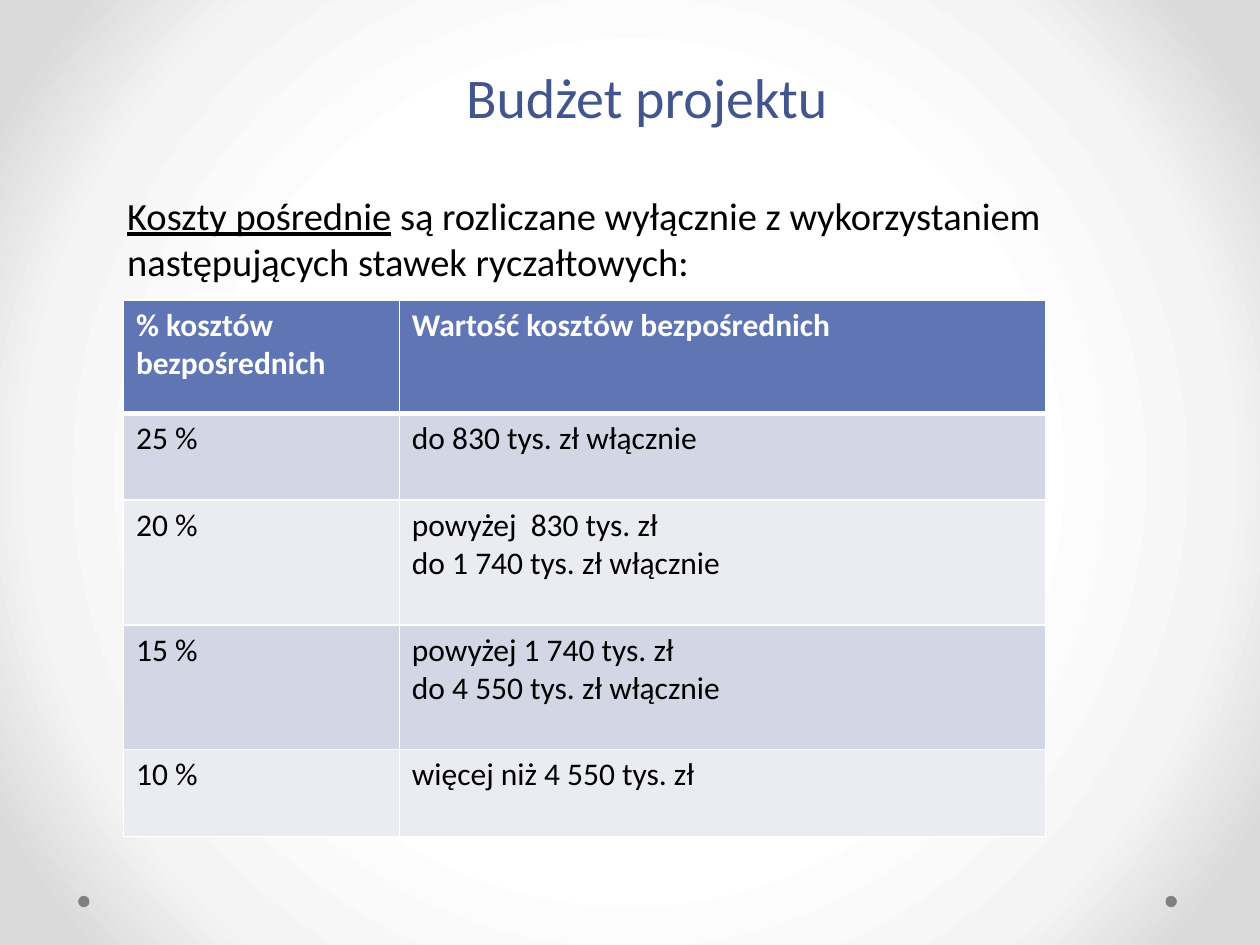
from dataclasses import dataclass

from pptx import Presentation
from pptx.dml.color import RGBColor
from pptx.enum.shapes import MSO_SHAPE as Shape
from pptx.enum.text import MSO_ANCHOR as Anchor, MSO_AUTO_SIZE as AutoSize, PP_ALIGN as Align
from pptx.oxml import parse_xml
from pptx.oxml.ns import nsdecls
from pptx.util import Inches, Pt

TITLE = "Budżet projektu"
INTRO = [
    ("Koszty pośrednie", True),
    (" są rozliczane wyłącznie z wykorzystaniem następujących stawek ryczałtowych:", False),
]
RATES = [
    ("% kosztów bezpośrednich", "Wartość kosztów bezpośrednich"),
    ("25 %", "do 830 tys. zł włącznie"),
    ("20 %", "powyżej  830 tys. zł\ndo 1 740 tys. zł włącznie"),
    ("15 %", "powyżej 1 740 tys. zł\ndo 4 550 tys. zł włącznie"),
    ("10 %", "więcej niż 4 550 tys. zł"),
]
COLUMN_WIDTHS = [2.19, 5.13]
ROW_HEIGHTS = [0.9, 0.69, 0.99, 0.99, 0.69]
TITLE_BOX = (0.98, 0.21, 8.31, 0.87)
INTRO_BOX = (0.91, 1.47, 8.58, 5.59)
TABLE_CORNER = (0.98, 2.38)
DOT_LEFTS = [0.62, 9.25]
DOT_TOP, DOT_SIZE = 7.11, 0.09


@dataclass(frozen=True)
class Theme:
    font: str = "Calibri"
    title_size: int = 32
    intro_size: int = 22
    table_size: int = 18
    title: str = "42568D"
    text: str = "000000"
    white: str = "FFFFFF"
    header: str = "6076B4"
    bands: tuple = ("D2D6E5", "EAECF2")
    dot: str = "808080"
    glow: tuple = ((50, "FFFFFF"), (76, "F4F4F4"), (92, "DADADA"))


THEME = Theme()


def add_text(para, text, size, color, bold=False, underline=False):
    first_new = len(para.runs)
    for index, line in enumerate(text.split("\n")):
        if index:
            para.add_line_break()
        para.add_run().text = line
    for span in para.runs[first_new:]:
        font = span.font
        font.name, font.size = THEME.font, Pt(size)
        font.bold, font.underline = bold, underline
        font.color.rgb = RGBColor.from_string(color)


def paint_background(page):
    """Fill the page with a circular gradient from the centre."""
    fill = page.background.fill
    fill.gradient()
    stops = "".join(
        f'<a:gs pos="{position * 1000}"><a:srgbClr val="{color}"/></a:gs>'
        for position, color in THEME.glow
    )
    gradient = parse_xml(
        f'<a:gradFill {nsdecls("a")} rotWithShape="1"><a:gsLst>{stops}</a:gsLst>'
        '<a:path path="circle"><a:fillToRect l="50000" t="50000" r="50000" b="50000"/>'
        "</a:path></a:gradFill>"
    )
    properties = page.background._cSld.bg.bgPr
    properties.replace(properties[0], gradient)


def place(box, bounds, anchor):
    box.left, box.top, box.width, box.height = map(Inches, bounds)
    frame = box.text_frame
    frame.word_wrap, frame.auto_size = True, AutoSize.NONE
    frame.vertical_anchor = anchor
    return frame.paragraphs[0]


def set_borders(cell, bottom_width):
    properties = cell._tc.get_or_add_tcPr()
    widths = {"lnL": 1, "lnR": 1, "lnT": 1, "lnB": bottom_width}
    for index, (side, width) in enumerate(widths.items()):
        line = parse_xml(
            f'<a:{side} {nsdecls("a")} w="{Pt(width)}"><a:solidFill>'
            f'<a:srgbClr val="{THEME.white}"/></a:solidFill></a:{side}>'
        )
        properties.insert(index, line)


def add_rates(page):
    size = (sum(COLUMN_WIDTHS), sum(ROW_HEIGHTS))
    table = page.shapes.add_table(
        len(RATES), len(COLUMN_WIDTHS), *map(Inches, TABLE_CORNER + size)
    ).table
    for column, width in zip(table.columns, COLUMN_WIDTHS):
        column.width = Inches(width)
    for row_index, (row, height, texts) in enumerate(zip(table.rows, ROW_HEIGHTS, RATES)):
        row.height = Inches(height)
        is_header = row_index == 0
        fill = THEME.header if is_header else THEME.bands[(row_index - 1) % 2]
        color = THEME.white if is_header else THEME.text
        for cell, text in zip(row.cells, texts):
            cell.fill.solid()
            cell.fill.fore_color.rgb = RGBColor.from_string(fill)
            set_borders(cell, bottom_width=3 if is_header else 1)
            add_text(cell.text_frame.paragraphs[0], text, THEME.table_size, color, bold=is_header)


def add_dot(page, left):
    dot = page.shapes.add_shape(Shape.OVAL, *map(Inches, (left, DOT_TOP, DOT_SIZE, DOT_SIZE)))
    dot.shadow.inherit = False
    dot.fill.solid()
    dot.fill.fore_color.rgb = RGBColor.from_string(THEME.dot)
    dot.line.fill.background()


def main():
    deck = Presentation()
    deck.slide_width, deck.slide_height = Inches(10), Inches(7.5)
    page = deck.slides.add_slide(deck.slide_layouts[0])
    paint_background(page)
    for left in DOT_LEFTS:
        add_dot(page, left)

    heading = place(page.shapes.title, TITLE_BOX, Anchor.BOTTOM)
    heading.alignment = Align.CENTER
    add_text(heading, TITLE, THEME.title_size, THEME.title)

    intro = place(page.placeholders[1], INTRO_BOX, Anchor.TOP)
    intro.alignment, intro.space_after = Align.LEFT, Pt(6)
    for text, underline in INTRO:
        add_text(intro, text, THEME.intro_size, THEME.text, underline=underline)

    add_rates(page)
    deck.save("out.pptx")


if __name__ == "__main__":
    main()
